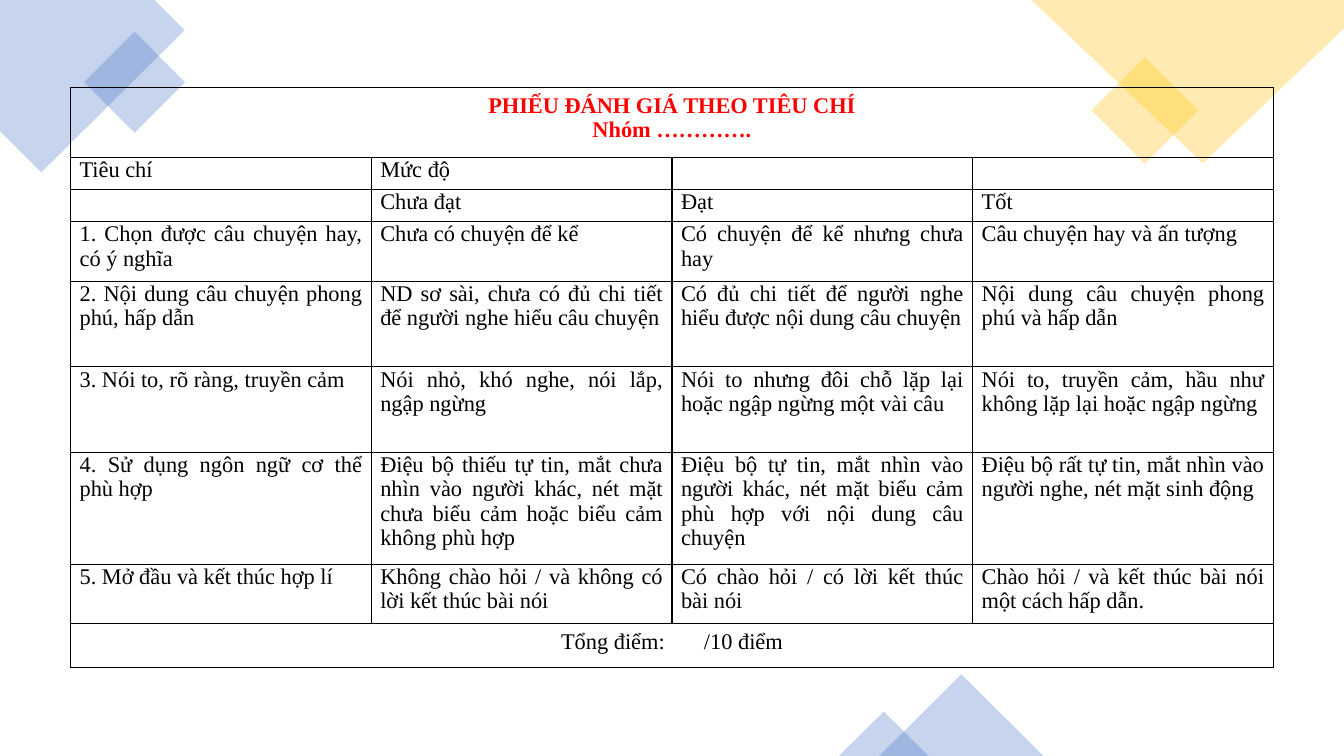
from dataclasses import dataclass
from math import cos, radians, sin

from lxml import etree
from pptx import Presentation
from pptx.dml.color import RGBColor
from pptx.enum.shapes import MSO_SHAPE
from pptx.enum.text import PP_ALIGN
from pptx.oxml.ns import qn
from pptx.util import Inches, Pt

RECT, PEAK = MSO_SHAPE.RECTANGLE, MSO_SHAPE.ISOSCELES_TRIANGLE
MID, FULL = PP_ALIGN.CENTER, PP_ALIGN.JUSTIFY


@dataclass(frozen=True)
class Theme:
    blue: str = "4472C4"
    gold: str = "FFC000"
    red: str = "FF0000"
    black: str = "000000"
    face: str = "Times New Roman"
    size: int = 16
    lead: float = 0.97
    alpha: int = 30
    rule: int = 1


@dataclass(frozen=True)
class Tile:
    kind: MSO_SHAPE
    left: float
    top: float
    wide: float
    high: float
    color: str
    turn: int = 0


@dataclass(frozen=True)
class Corner:
    points: tuple
    mid: tuple
    color: str
    turn: int


LOOK = Theme()

BLUE_CORNER = Corner(((1.53, 0), (0, 0), (0, 1.3), (0.41, 1.71), (1.83, 0.3)),
                     (0.59, 0.475), LOOK.blue, 315)
GOLD_CORNER = Corner(((13.33, 0), (10.23, 0), (11.93, 1.62), (13.33, 0.28)),
                     (11.78, 0.81), LOOK.gold, 180)
TILES = (
    Tile(RECT, 0.98, 0.46, 0.71, 0.71, LOOK.blue, 315),
    Tile(RECT, 10.98, 0.72, 0.75, 0.75, LOOK.gold, 315),
)
PEAKS = (
    Tile(PEAK, 8.72, 6.69, 1.63, 0.81, LOOK.blue),
    Tile(PEAK, 8.32, 7.06, 0.89, 0.44, LOOK.blue),
)

TITLE = ("PHIẾU ĐÁNH GIÁ THEO TIÊU CHÍ", "Nhóm ………….")
TOTAL = ("Tổng điểm:", "/10 điểm")
GRID = (
    ("Tiêu chí", "Mức độ", "", ""),
    ("", "Chưa đạt", "Đạt", "Tốt"),
    ("1. Chọn được câu chuyện hay, có ý nghĩa", "Chưa có chuyện để kể",
     "Có chuyện để kể nhưng chưa hay", "Câu chuyện hay và ấn tượng"),
    ("2. Nội dung câu chuyện phong phú, hấp dẫn",
     "ND sơ sài, chưa có đủ chi tiết để người nghe hiểu câu chuyện",
     "Có đủ chi tiết để người nghe hiểu được nội dung câu chuyện",
     "Nội dung câu chuyện phong phú và hấp dẫn"),
    ("3. Nói to, rõ ràng, truyền cảm", "Nói nhỏ, khó nghe, nói lắp, ngập ngừng",
     "Nói to nhưng đôi chỗ lặp lại hoặc ngập ngừng một vài câu",
     "Nói to, truyền cảm, hầu như không lặp lại hoặc ngập ngừng"),
    ("4. Sử dụng ngôn ngữ cơ thể phù hợp",
     "Điệu bộ thiếu tự tin, mắt chưa nhìn vào người khác, nét mặt chưa biểu cảm "
     "hoặc biểu cảm không phù hợp",
     "Điệu bộ tự tin, mắt nhìn vào người khác, nét mặt biểu cảm phù hợp với nội "
     "dung câu chuyện",
     "Điệu bộ rất tự tin, mắt nhìn vào người nghe, nét mặt sinh động"),
    ("5. Mở đầu và kết thúc hợp lí", "Không chào hỏi / và không có lời kết thúc bài nói",
     "Có chào hỏi / có lời kết thúc bài nói",
     "Chào hỏi / và kết thúc bài nói một cách hấp dẫn."),
)
HEIGHTS = (0.69, 0.32, 0.32, 0.59, 0.85, 0.85, 1.11, 0.59, 0.43)
COLS, WIDTH = 4, 11.93


def tint(shape, color: str) -> None:
    shape.shadow.inherit = False
    shape.line.fill.background()
    shape.fill.solid()
    shape.fill.fore_color.rgb = RGBColor.from_string(color)
    tone = shape.fill._xPr.find(qn("a:solidFill"))[0]
    etree.SubElement(tone, qn("a:alpha")).set("val", str(LOOK.alpha * 1000))


def draw_tile(slide, tile: Tile) -> None:
    box = map(Inches, (tile.left, tile.top, tile.wide, tile.high))
    shape = slide.shapes.add_shape(tile.kind, *box)
    shape.rotation = tile.turn
    tint(shape, tile.color)


def draw_corner(slide, corner: Corner) -> None:
    """Build the outline turned back about its middle, then rotate it into place."""
    angle = radians(-corner.turn)
    mid_x, mid_y = corner.mid
    spots = []
    for x, y in corner.points:
        dx, dy = x - mid_x, y - mid_y
        spots.append((Inches(mid_x + dx * cos(angle) - dy * sin(angle)),
                      Inches(mid_y + dx * sin(angle) + dy * cos(angle))))
    form = slide.shapes.build_freeform(*spots[0])
    form.add_line_segments(spots[1:], close=True)
    shape = form.convert_to_shape()
    shape.rotation = corner.turn
    tint(shape, corner.color)


def write(para, text: str, *, align=FULL, color: str = LOOK.black,
          bold: bool = False, track: int = 0) -> None:
    """Add one run; track is extra letter spacing in points."""
    para.alignment = align
    para.line_spacing = LOOK.lead
    if not text:
        para._p.get_or_add_endParaRPr().set("sz", str(LOOK.size * 100))
        return
    run = para.add_run()
    run.text = text
    font = run.font
    font.name, font.size, font.bold = LOOK.face, Pt(LOOK.size), bold
    font.color.rgb = RGBColor.from_string(color)
    if track:
        run._r.get_or_add_rPr().set("spc", str(track * 100))


def frame(cell, inset: tuple) -> None:
    """Set insets, clear the fill and rule all four sides."""
    side, top, base = map(Inches, inset)
    cell.margin_left = cell.margin_right = side
    cell.margin_top, cell.margin_bottom = top, base
    cell.fill.background()
    props = cell._tc.get_or_add_tcPr()
    for place, edge in enumerate("LRTB"):
        line = etree.Element(qn(f"a:ln{edge}"), w=str(Pt(LOOK.rule)))
        fill = etree.SubElement(line, qn("a:solidFill"))
        etree.SubElement(fill, qn("a:srgbClr"), val=LOOK.black)
        props.insert(place, line)


def draw_table(slide) -> None:
    count = len(HEIGHTS)
    table = slide.shapes.add_table(count, COLS, Inches(0.7), Inches(0.87),
                                   Inches(WIDTH), Inches(sum(HEIGHTS))).table
    table.first_row = table.horz_banding = False
    for col in table.columns:
        col.width = Inches(WIDTH / COLS)
    for row, high in zip(table.rows, HEIGHTS):
        row.height = Inches(high)
    last = count - 1
    for row in range(count):
        wide = row in (0, last)
        for col in range(COLS):
            cell = table.cell(row, col)
            frame(cell, (0.12, 0.06, 0.06) if wide else (0.09, 0.01, 0))
            if not wide:
                write(cell.text_frame.paragraphs[0], GRID[row - 1][col])
        if wide:
            table.cell(row, 0).merge(table.cell(row, COLS - 1))

    head = table.cell(0, 0).text_frame
    for para, text in zip((head.paragraphs[0], head.add_paragraph()), TITLE):
        write(para, text, align=MID, color=LOOK.red, bold=True)
    foot = table.cell(last, 0).text_frame.paragraphs[0]
    label, score = TOTAL
    write(foot, label, align=MID)
    write(foot, " ", align=MID, track=24)
    write(foot, score, align=MID)


def main() -> None:
    deck = Presentation()
    deck.slide_width, deck.slide_height = Inches(13.33), Inches(7.5)
    slide = deck.slides.add_slide(deck.slide_layouts[6])
    draw_corner(slide, BLUE_CORNER)
    for tile in TILES:
        draw_tile(slide, tile)
    draw_corner(slide, GOLD_CORNER)
    for peak in PEAKS:
        draw_tile(slide, peak)
    draw_table(slide)
    deck.save("out.pptx")


if __name__ == "__main__":
    main()
